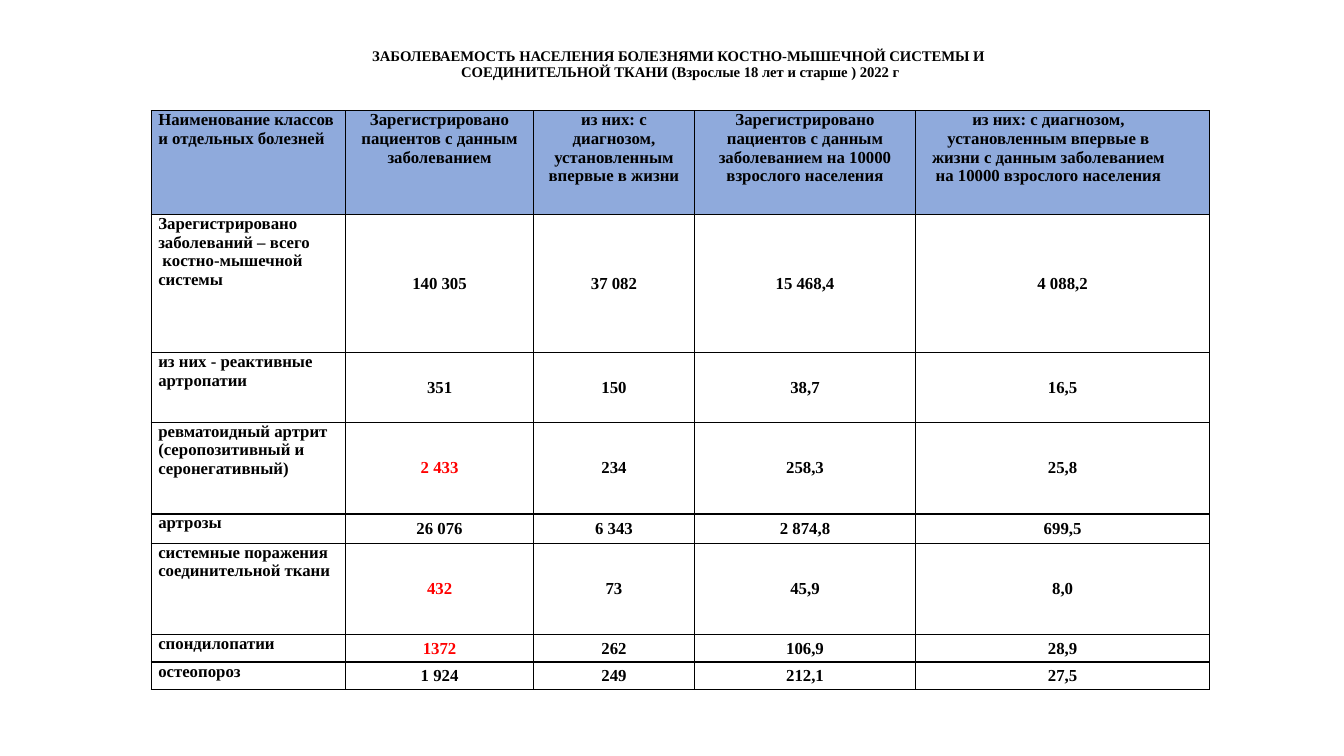
from lxml import etree
from pptx import Presentation
from pptx.dml.color import RGBColor
from pptx.enum import text
from pptx.oxml import ns
from pptx.util import Inches, Pt

FONT = "Times New Roman"
BLACK, RED, WHITE, BLUE = "000000", "FF0000", "FFFFFF", "8FAADC"
CENTER = text.PP_ALIGN.CENTER
LEFT = text.PP_ALIGN.LEFT

COL_WIDTHS = [1.93, 1.86, 1.6, 2.19, 2.92]
ROW_HEIGHTS = [0.62, 1.03, 1.37, 0.69, 0.91, 0.29, 0.91, 0.27, 0.27]

TITLE = (
    "ЗАБОЛЕВАЕМОСТЬ НАСЕЛЕНИЯ БОЛЕЗНЯМИ КОСТНО-МЫШЕЧНОЙ СИСТЕМЫ И \n"
    "СОЕДИНИТЕЛЬНОЙ ТКАНИ (Взрослые 18 лет и старше ) 2022 г"
)
HEADERS = [
    "Наименование классов и отдельных болезней",
    "Зарегистрировано пациентов с данным заболеванием",
    "из них: с диагнозом, установленным впервые в жизни",
    "Зарегистрировано пациентов с данным заболеванием на 10000 взрослого населения",
    "из них: с диагнозом, установленным впервые в жизни с данным заболеванием "
    "на 10000 взрослого населения",
]
DISEASES = [
    ["Зарегистрировано заболеваний – всего\n костно-мышечной системы",
     "140 305", "37 082", "15 468,4", "4 088,2"],
    ["из них - реактивные артропатии", "351", "150", "38,7", "16,5"],
    ["ревматоидный артрит (серопозитивный и серонегативный)",
     "2 433", "234", "258,3", "25,8"],
    ["артрозы", "26 076", "6 343", "2 874,8", "699,5"],
    ["системные поражения соединительной ткани", "432", "73", "45,9", "8,0"],
    ["спондилопатии", "1372", "262", "106,9", "28,9"],
    ["остеопороз", "1 924", "249", "212,1", "27,5"],
]
HIGHLIGHTED = {"2 433", "432", "1372"}


def rgb(color):
    return RGBColor.from_string(color)


def set_borders(cell, visible):
    """Draw the sides named in visible (from "LRTB") and clear the others."""
    tcPr = cell._tc.get_or_add_tcPr()
    for side in "LRTB":
        ln = etree.SubElement(tcPr, ns.qn(f"a:ln{side}"), w=str(Pt(1)))
        if side in visible:
            fill = etree.SubElement(ln, ns.qn("a:solidFill"))
            etree.SubElement(fill, ns.qn("a:srgbClr"), val=BLACK)
        else:
            etree.SubElement(ln, ns.qn("a:noFill"))


def style_cell(cell, fill, borders="LRTB"):
    set_borders(cell, borders)
    cell.fill.solid()
    cell.fill.fore_color.rgb = rgb(fill)
    cell.margin_left = cell.margin_right = Inches(0.07)
    cell.margin_top = cell.margin_bottom = 0


def write_cell(cell, content, size=12, align=CENTER, color=BLACK):
    tf = cell.text_frame
    tf.text = content
    for p in tf.paragraphs:
        p.alignment = align
        for r in p.runs:
            r.font.name = FONT
            r.font.size = Pt(size)
            r.font.bold = True
            r.font.color.rgb = rgb(color)


def add_grid(s):
    frame = s.shapes.add_table(
        len(ROW_HEIGHTS), len(COL_WIDTHS), Inches(1.5), Inches(0.48),
        Inches(sum(COL_WIDTHS)), Inches(sum(ROW_HEIGHTS)))
    table = frame.table
    table.first_row = table.horz_banding = False
    for column, width in zip(table.columns, COL_WIDTHS):
        column.width = Inches(width)
    for row, height in zip(table.rows, ROW_HEIGHTS):
        row.height = Inches(height)
    return table


def fill_title(table):
    for cell in table.rows[0].cells:
        style_cell(cell, WHITE, "B")
    title = table.cell(0, 0)
    title.merge(table.cell(0, len(COL_WIDTHS) - 1))
    write_cell(title, TITLE, size=10.5)


def fill_headers(table):
    for col, header in enumerate(HEADERS):
        cell = table.cell(1, col)
        style_cell(cell, BLUE)
        write_cell(cell, header, align=CENTER if col else LEFT)
    cell.margin_right = Inches(0.35)


def fill_diseases(table):
    for row, values in enumerate(DISEASES, start=2):
        for col, value in enumerate(values):
            cell = table.cell(row, col)
            style_cell(cell, WHITE)
            if col:
                cell.vertical_anchor = text.MSO_ANCHOR.MIDDLE
            write_cell(cell, value, align=CENTER if col else LEFT,
                       color=RED if value in HIGHLIGHTED else BLACK)


def main():
    prs = Presentation()
    prs.slide_width, prs.slide_height = Inches(13.33), Inches(7.5)
    s = prs.slides.add_slide(prs.slide_layouts[6])
    table = add_grid(s)
    fill_title(table)
    fill_headers(table)
    fill_diseases(table)
    prs.save("out.pptx")


if __name__ == "__main__":
    main()
